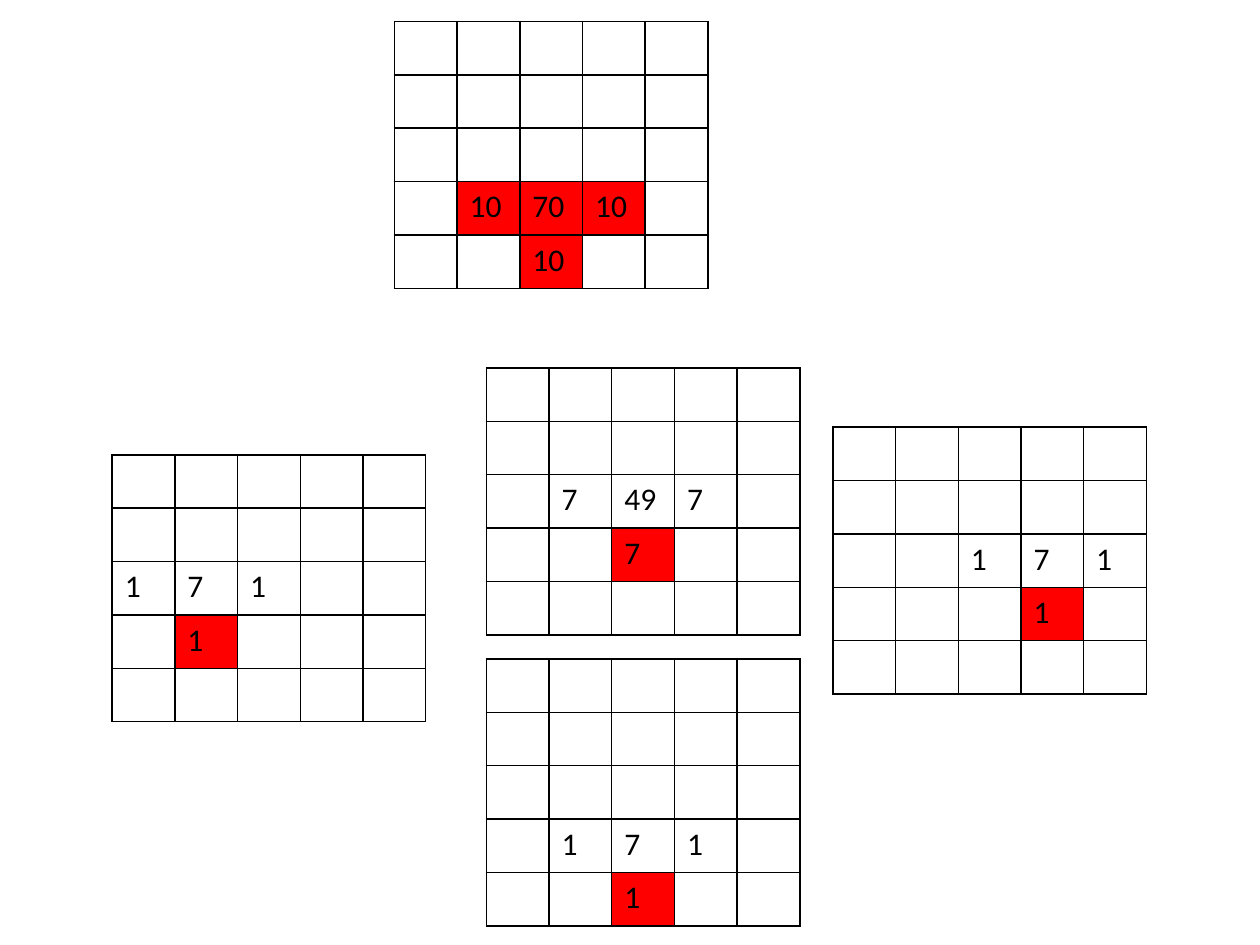
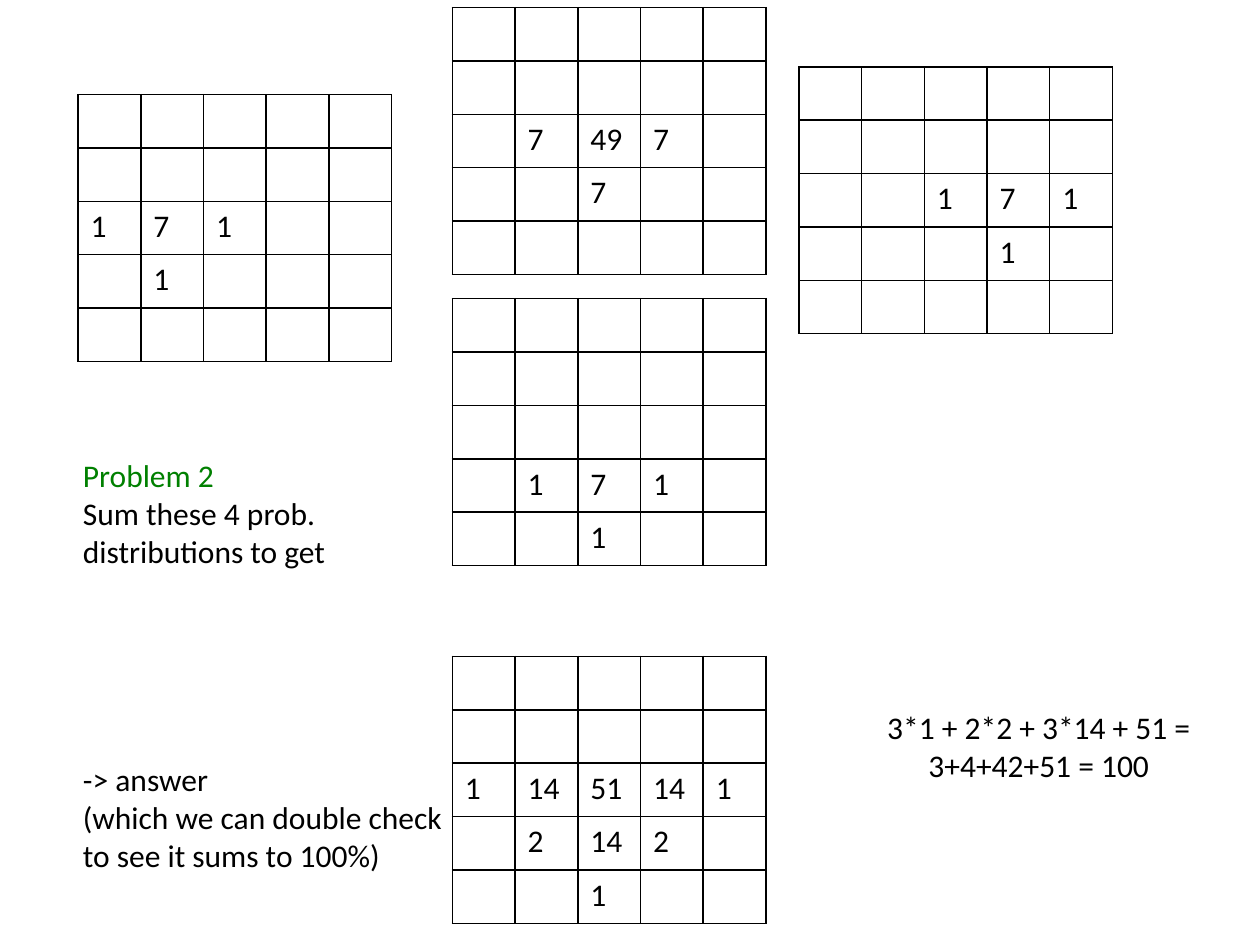
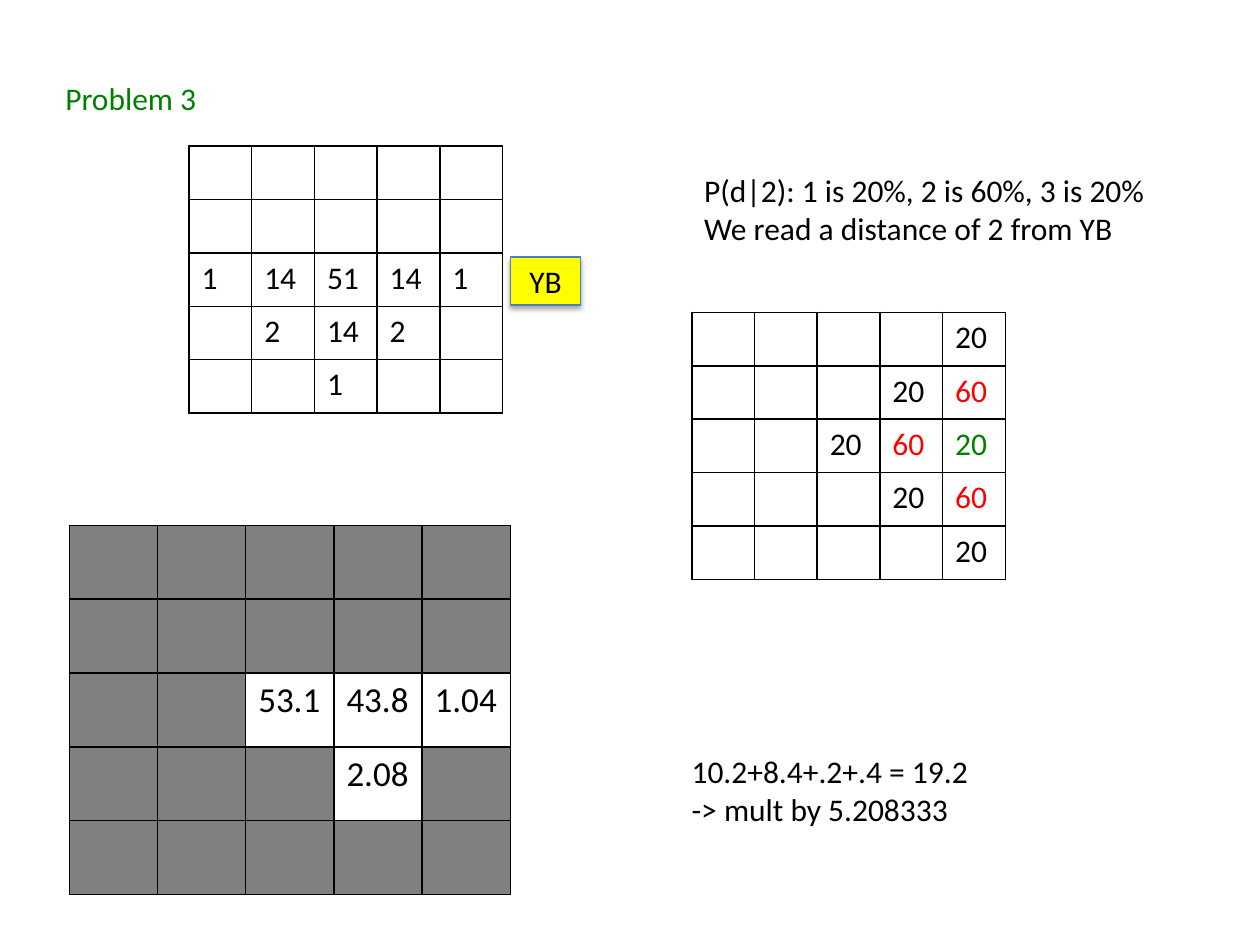
from collections import Counter
from lxml.etree import SubElement
from pptx import Presentation
from pptx.dml.color import RGBColor
from pptx.enum.shapes import MSO_SHAPE
from pptx.enum.text import MSO_ANCHOR, MSO_AUTO_SIZE, PP_ALIGN
from pptx.oxml import parse_xml
from pptx.oxml.ns import nsdecls, qn
from pptx.util import Inches, Pt

COLORS = {
    "ink": "000000",
    "heading": "008000",
    "red": "FF0000",
    "ruled_out": "808080",
    "robot": "FFFF00",
    "robot_edge": "4B7EBC",
}
SIZE = 5
GRID_WIDTH, GRID_HEIGHT = 2.49, 2.12


def tee(row, col, side, middle):
    return Counter({
        (row, col - 1): side,
        (row, col): middle,
        (row, col + 1): side,
        (row + 1, col): side,
    })


MOVES = [
    (0, 0, (2, 1), 1, 7),
    (2.97, 1.62, (3, 2), 1, 7),
    (5.72, -0.22, (2, 3), 1, 7),
    (2.97, -0.69, (2, 2), 7, 49),
]
BELIEF = sum((tee(*center, side, middle) for _, _, center, side, middle in MOVES), Counter())


class Deck:
    def __init__(self):
        self.presentation = Presentation()
        self.presentation.slide_width = Inches(10)
        self.presentation.slide_height = Inches(7.5)
        self.slide = None

    def add_slide(self):
        self.slide = self.presentation.slides.add_slide(self.presentation.slide_layouts[6])

    def color(self, name):
        return RGBColor.from_string(COLORS[name])

    def apply(self, target, **formats):
        for name, value in formats.items():
            setattr(target, name, value)

    def add_words(self, paragraph, words, color="ink", size=18):
        run = paragraph.add_run()
        run.text = words
        self.apply(run.font, name="Calibri", size=Pt(size), bold=False)
        run.font.color.rgb = self.color(color)

    def text(self, left, top, width, height, lines, align=PP_ALIGN.LEFT, gaps=None):
        frame = self.slide.shapes.add_textbox(
            Inches(left), Inches(top), Inches(width), Inches(height)).text_frame
        self.apply(frame, word_wrap=False, auto_size=MSO_AUTO_SIZE.SHAPE_TO_FIT_TEXT)
        for index, line in enumerate(lines):
            paragraph = frame.add_paragraph() if index else frame.paragraphs[0]
            paragraph.alignment = align
            if gaps and index in gaps:
                paragraph.space_before = Pt(gaps[index])
            self.add_words(paragraph, line, "heading" if line.startswith("Problem") else "ink")

    def border(self, cell):
        properties = cell._tc.get_or_add_tcPr()
        for index, side in enumerate("LRTB"):
            properties.insert(index, parse_xml(
                f'<a:ln{side} {nsdecls("a")} w="{Pt(1)}"><a:solidFill>'
                f'<a:srgbClr val="{COLORS["ink"]}"/></a:solidFill></a:ln{side}>'))

    def grid(self, left, top, values, fills=None, inks=None, size=18,
             width=GRID_WIDTH, height=GRID_HEIGHT):
        fills, inks = fills or {}, inks or {}
        table = self.slide.shapes.add_table(
            SIZE, SIZE, Inches(left), Inches(top), Inches(width), Inches(height)).table
        self.apply(table, first_row=False, horz_banding=False)
        for row in range(SIZE):
            for col in range(SIZE):
                cell, place = table.cell(row, col), (row, col)
                if place in fills:
                    cell.fill.solid()
                    cell.fill.fore_color.rgb = self.color(fills[place])
                else:
                    cell.fill.background()
                self.border(cell)
                if place in values:
                    self.add_words(cell.text_frame.paragraphs[0], str(values[place]),
                                   inks.get(place, "ink"), size)

    def move_grids(self, left, top, highlight=False):
        for across, down, (row, col), side, middle in MOVES:
            fills = {(row + 1, col): "red"} if highlight else {}
            self.grid(left + across, top + down, tee(row, col, side, middle), fills)

    def badge(self, left, top, width, height, label):
        badge = self.slide.shapes.add_shape(
            MSO_SHAPE.RECTANGLE, Inches(left), Inches(top), Inches(width), Inches(height))
        badge.fill.solid()
        badge.fill.fore_color.rgb = self.color("robot")
        badge.line.color.rgb = self.color("robot_edge")
        badge.line.width = Pt(0.75)
        badge.shadow.inherit = False
        effects = badge._element.spPr.find(qn("a:effectLst"))
        shadow = SubElement(effects, qn("a:outerShdw"), blurRad=str(Pt(3.1)),
                            dist=str(Pt(1.8)), dir="5400000", rotWithShape="0")
        tint = SubElement(shadow, qn("a:srgbClr"), val=COLORS["ink"])
        SubElement(tint, qn("a:alpha"), val="35000")
        self.apply(badge.text_frame, word_wrap=False, vertical_anchor=MSO_ANCHOR.MIDDLE)
        paragraph = badge.text_frame.paragraphs[0]
        paragraph.alignment = PP_ALIGN.CENTER
        self.add_words(paragraph, label)


def prediction_slide(deck):
    deck.add_slide()
    prior = tee(3, 2, 10, 70)
    deck.grid(3.13, 0.17, prior, dict.fromkeys(prior, "red"))
    deck.move_grids(0.89, 3.61, highlight=True)


def sum_slide(deck):
    deck.add_slide()
    deck.move_grids(0.62, 0.75)
    deck.grid(3.59, 5.21, BELIEF)
    deck.text(6.93, 5.57, 2.63, 0.71,
              ["3*1 + 2*2 + 3*14 + 51 =", "3+4+42+51 = 100"], PP_ALIGN.CENTER)
    deck.text(0.56, 3.57, 3.08, 3.43, [
        "Problem 2",
        "Sum these 4 prob.",
        "distributions to get",
        "-> answer",
        "(which we can double check",
        "to see it sums to 100%)",
    ], gaps={3: 109})


def sensor_slide(deck):
    deck.add_slide()
    deck.text(0.42, 0.58, 1.26, 0.4, ["Problem 3"])
    deck.grid(1.5, 1.16, BELIEF)
    deck.badge(4.05, 2.04, 0.56, 0.38, "YB")
    deck.text(5.49, 1.31, 3.74, 0.71, [
        "P(d|2): 1 is 20%, 2 is 60%, 3 is 20%",
        "We read a distance of 2 from YB",
    ])

    cells = [(row, col) for row in range(SIZE) for col in range(SIZE)]
    distances = {(row, col): abs(row - 2) + SIZE - col for row, col in cells}
    chances = {1: 20, 2: 60, 3: 20}
    inks = {1: "heading", 2: "red", 3: "ink"}
    near = {place: steps for place, steps in distances.items() if steps in chances}
    deck.grid(5.49, 2.48, {place: chances[steps] for place, steps in near.items()},
              inks={place: inks[steps] for place, steps in near.items()})

    posterior = {(2, 2): "53.1", (2, 3): "43.8", (2, 4): "1.04", (3, 3): "2.08"}
    ruled_out = [place for place in cells if place not in posterior]
    deck.grid(0.55, 4.17, posterior, dict.fromkeys(ruled_out, "ruled_out"),
              size=20, width=3.5, height=2.93)
    deck.text(5.39, 5.92, 2.42, 0.71, ["10.2+8.4+.2+.4 = 19.2", "-> mult by 5.208333"])


def main():
    deck = Deck()
    prediction_slide(deck)
    sum_slide(deck)
    sensor_slide(deck)
    deck.presentation.save("out.pptx")


if __name__ == "__main__":
    main()
